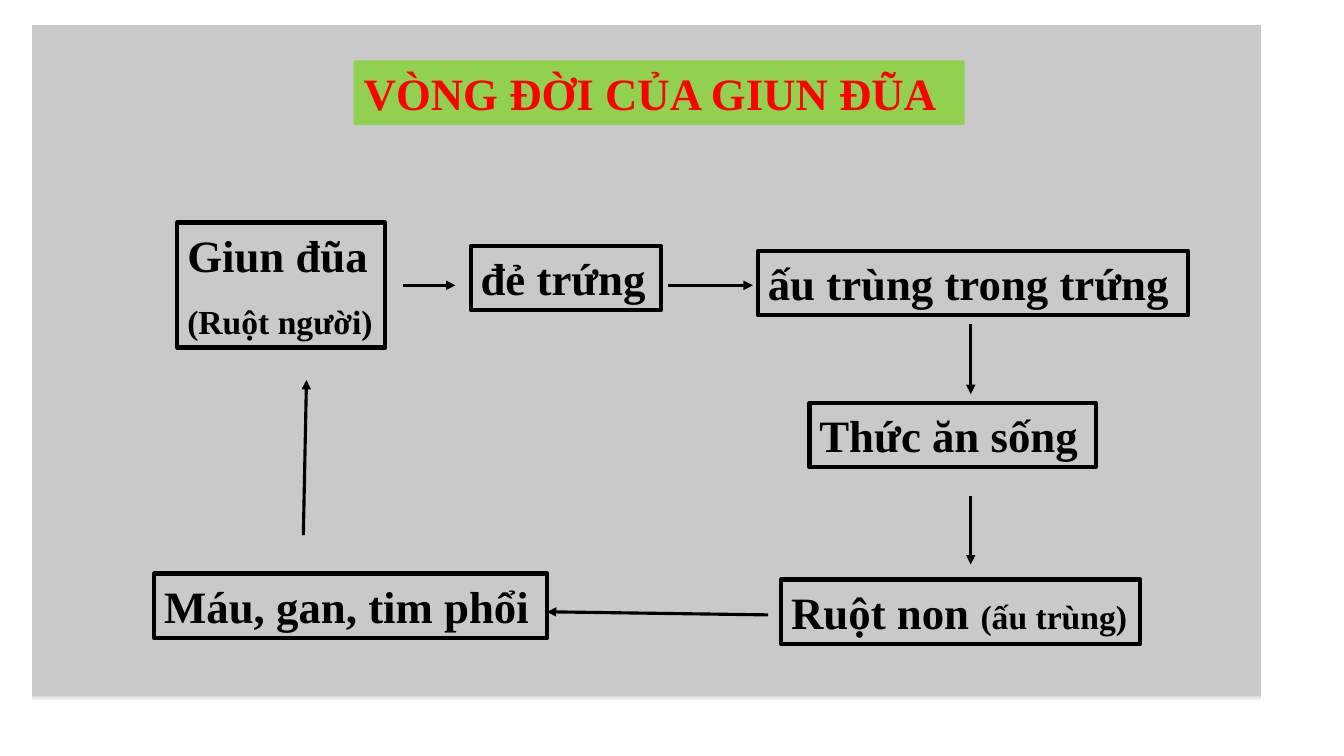
from lxml.etree import SubElement
from pptx import Presentation
from pptx.dml.color import RGBColor
from pptx.enum.shapes import MSO_CONNECTOR, MSO_SHAPE
from pptx.enum.text import MSO_ANCHOR, MSO_AUTO_SIZE, PP_ALIGN
from pptx.oxml.ns import qn
from pptx.util import Pt

BLACK = "000000"
LARGE, SMALL = 32, 24

# Left, top, width, height, then paragraphs made of (text, size) spans
STAGES = [
    (126.7, 159, 148.6, 89.3, [[("Giun đũa", LARGE)], [("(Ruột người)", SMALL)]]),
    (336.2, 175.7, 136.1, 45.7, [[("đẻ trứng", LARGE)]]),
    (541.4, 179.3, 307.4, 46, [[("ấu trùng trong trứng", LARGE)]]),
    (578.2, 288, 204.5, 45.7, [[("Thức ăn sống", LARGE)]]),
    (558, 414, 256.5, 46, [[("Ruột non ", LARGE), ("(ấu trùng)", SMALL)]]),
    (110.2, 409.7, 280.8, 46, [[("Máu, gan, tim phổi", LARGE)]]),
]

# Start x, start y, end x, end y
ARROWS = [
    (288, 203.8, 325.4, 203.8),
    (477.4, 203.8, 537.8, 203.8),
    (693.4, 231.1, 693.4, 281.5),
    (693.4, 354.2, 693.4, 403.2),
    (548.6, 439.2, 390.6, 437),
    (216.7, 382.3, 218.9, 271.4),
]


def color(value):
    return RGBColor.from_string(value)


class CycleSlide:
    font_name = "Times New Roman"
    frame_width = 3
    arrow_width = 2.25
    paragraph_gap = 14

    def __init__(self, page):
        self.page = page

    def rectangle(self, left, top, width, height, fill=None, line=None):
        box = self.page.shapes.add_shape(
            MSO_SHAPE.RECTANGLE, Pt(left), Pt(top), Pt(width), Pt(height))
        box.shadow.inherit = False
        if fill:
            box.fill.solid()
            box.fill.fore_color.rgb = color(fill)
        else:
            box.fill.background()
        if line:
            box.line.color.rgb = color(line)
            box.line.width = Pt(self.frame_width)
        else:
            box.line.fill.background()
        return box

    def panel(self, left, top, width, height, fill, shadow):
        """Add a filled rectangle with a thin hard shadow below it."""
        box = self.rectangle(left, top, width, height, fill)
        effects = box._element.spPr.find(qn("a:effectLst"))
        outer = SubElement(effects, qn("a:outerShdw"), blurRad="0",
                           dist=str(Pt(2)), dir="5400000", rotWithShape="0")
        SubElement(outer, qn("a:srgbClr"), val=shadow)

    def label(self, left, top, width, height, paragraphs,
              text_color=BLACK, fill=None, line=None):
        box = self.rectangle(left, top, width, height, fill, line)
        frame = box.text_frame
        frame.word_wrap = True
        frame.auto_size = MSO_AUTO_SIZE.SHAPE_TO_FIT_TEXT
        frame.vertical_anchor = MSO_ANCHOR.TOP
        for index, spans in enumerate(paragraphs):
            para = frame.add_paragraph() if index else frame.paragraphs[0]
            para.alignment = PP_ALIGN.LEFT
            para.space_before = Pt(self.paragraph_gap if index else 0)
            para.font.name = self.font_name
            para.font.bold = True
            para.font.color.rgb = color(text_color)
            for text, size in spans:
                span = para.add_run()
                span.text = text
                span.font.size = Pt(size)

    def arrow(self, start_x, start_y, end_x, end_y):
        connector = self.page.shapes.add_connector(
            MSO_CONNECTOR.STRAIGHT, Pt(start_x), Pt(start_y), Pt(end_x), Pt(end_y))
        connector.line.color.rgb = color(BLACK)
        connector.line.width = Pt(self.arrow_width)
        SubElement(connector.line._get_or_add_ln(), qn("a:tailEnd"), type="triangle")
        SubElement(connector._element.spPr, qn("a:effectLst"))


def main():
    deck = Presentation()
    deck.slide_width, deck.slide_height = Pt(960), Pt(540)
    slide = CycleSlide(deck.slides.add_slide(deck.slide_layouts[6]))
    slide.panel(23, 18, 877.7, 479.5, fill="C9C9C9", shadow="E7E6E6")
    for ends in ARROWS:
        slide.arrow(*ends)
    for stage in STAGES:
        slide.label(*stage, line=BLACK)
    slide.label(252.7, 43.2, 436.3, 46, [[("VÒNG ĐỜI CỦA GIUN ĐŨA", LARGE)]],
                text_color="FF0000", fill="92D050")
    deck.save("out.pptx")


if __name__ == "__main__":
    main()
